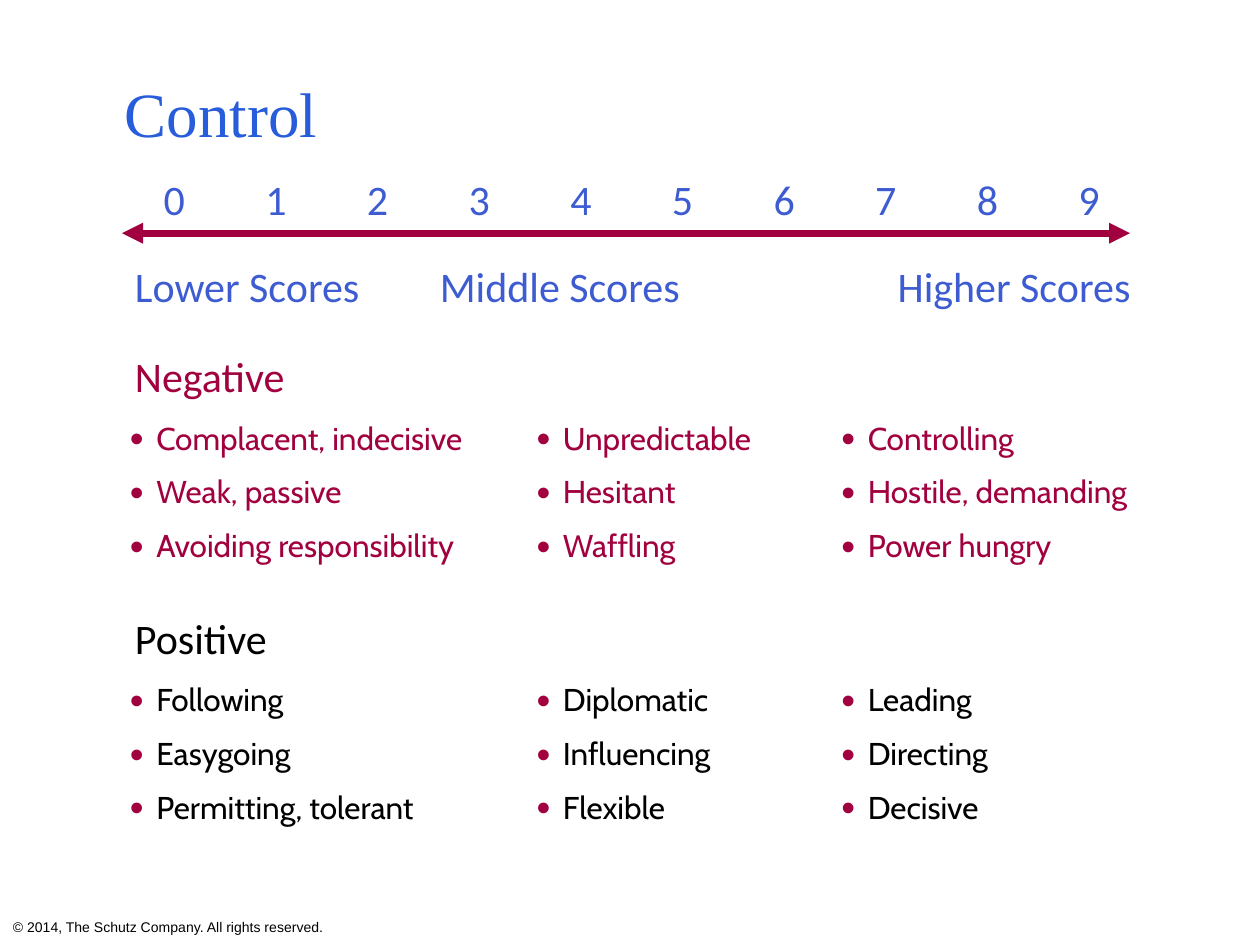
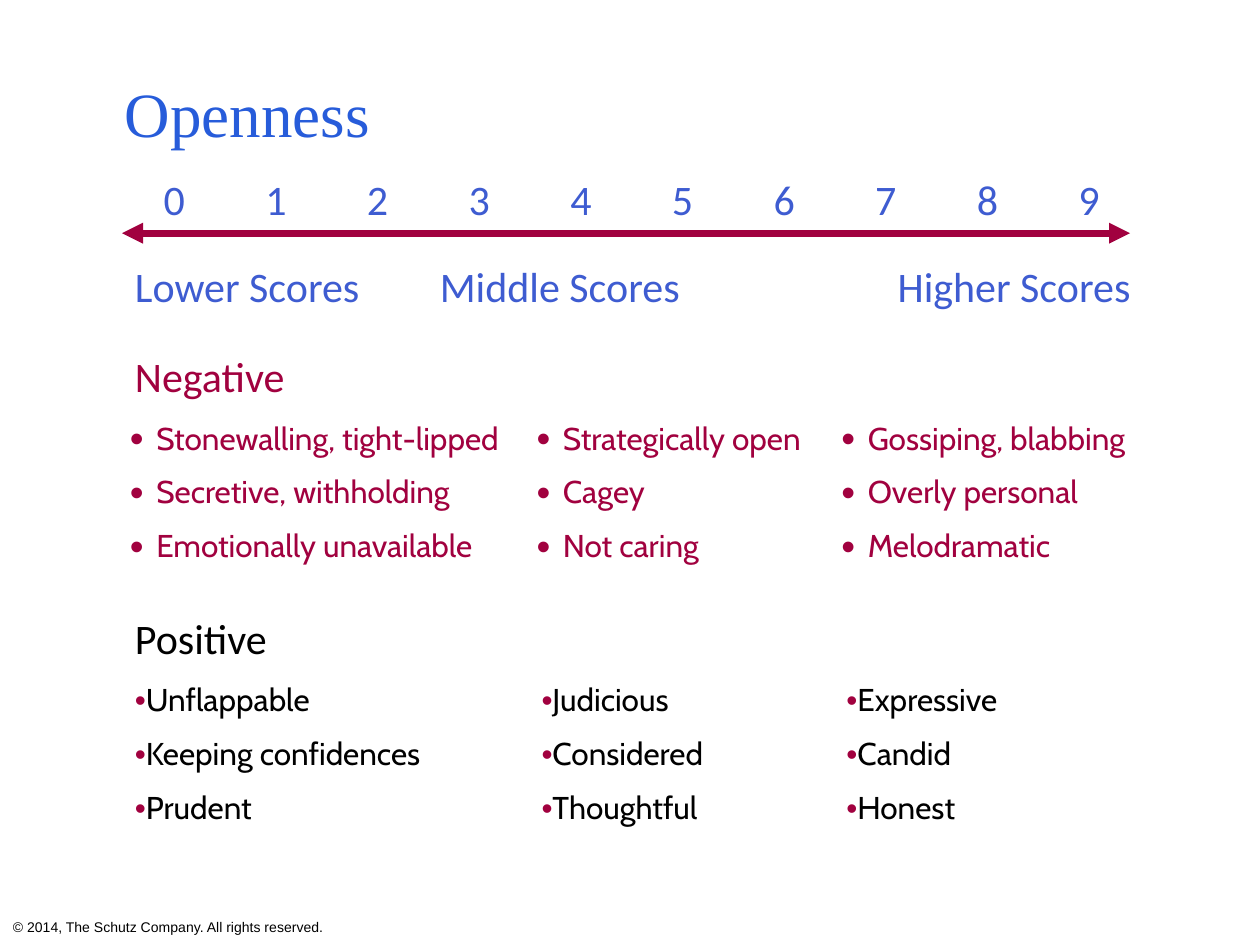
from dataclasses import dataclass

from lxml.etree import SubElement
from pptx import Presentation
from pptx.dml.color import RGBColor
from pptx.enum.shapes import MSO_CONNECTOR as Connector
from pptx.enum.text import MSO_ANCHOR as Anchor, MSO_AUTO_SIZE as AutoSize, PP_ALIGN as Align
from pptx.oxml.ns import qn
from pptx.util import Cm, Pt

# Shared colours, fonts and lengths
BLUE = RGBColor(0x3E, 0x5C, 0xD1)
TITLE_BLUE = RGBColor(0x27, 0x5C, 0xDA)
CRIMSON = RGBColor(0xA1, 0x01, 0x3F)
BLACK = RGBColor(0, 0, 0)
INSET = Cm(0.16)
INDENT = Cm(0.1)
DIGIT_INDENT = Cm(0.68)
BULLET_INDENT = Cm(0.53)
TABLE_LEFT, TABLE_TOP = Cm(2.46), Cm(3.25)
COLUMN_WIDTH = Cm(2.05)
ITEM_HEIGHT = Cm(1.07)
ROW_HEIGHTS = [Cm(1.63), Cm(1.85), Cm(1.57), *[ITEM_HEIGHT] * 3, Cm(2.03), *[ITEM_HEIGHT] * 3]
HEADING_SPANS = (3, 4, 3)
ITEM_SPANS = (4, 3, 3)
PLAIN_TABLE_STYLE = "{2D5ABB26-0587-4C30-8999-92F81FD0307C}"
COPYRIGHT = "© 2014, The Schutz Company. All rights reserved."


@dataclass(frozen=True)
class TextStyle:
    font: str
    size: int
    color: RGBColor


TITLE = TextStyle("Times New Roman", 36, TITLE_BLUE)
FOOTER = TextStyle("Arial", 8, BLACK)
SCALE = TextStyle("Calibri", 24, BLUE)
NEGATIVE_HEADING = TextStyle("Calibri", 24, CRIMSON)
POSITIVE_HEADING = TextStyle("Calibri", 24, BLACK)
NEGATIVE_ITEM = TextStyle("Cabin", 18, CRIMSON)
POSITIVE_ITEM = TextStyle("Cabin", 18, BLACK)


@dataclass(frozen=True)
class ScoreSlide:
    title: str
    title_width: Cm
    negative: tuple
    positive: tuple
    positive_hangs: bool = True


SLIDES = (
    ScoreSlide(
        "Control", Cm(5.18),
        (("Complacent, indecisive", "Unpredictable", "Controlling"),
         ("Weak, passive", "Hesitant", "Hostile, demanding"),
         ("Avoiding responsibility", "Waffling", "Power hungry")),
        (("Following", "Diplomatic", "Leading"),
         ("Easygoing", "Influencing", "Directing"),
         ("Permitting, tolerant", "Flexible", "Decisive")),
    ),
    ScoreSlide(
        "Openness", Cm(6.81),
        (("Stonewalling, tight-lipped", "Strategically open", "Gossiping, blabbing"),
         ("Secretive, withholding", "Cagey", "Overly personal"),
         ("Emotionally unavailable", "Not caring", "Melodramatic")),
        (("Unflappable", "Judicious", "Expressive"),
         ("Keeping confidences", "Considered", "Candid"),
         ("Prudent", "Thoughtful", "Honest")),
        positive_hangs=False,
    ),
)


def set_indent(para, left: int, first: int = 0) -> None:
    properties = para._p.get_or_add_pPr()
    properties.set("marL", str(int(left)))
    properties.set("indent", str(int(first)))


def add_bullet(para, hangs: bool) -> None:
    """Put a crimson bullet on the paragraph, larger when it hangs."""
    set_indent(para, BULLET_INDENT if hangs else INDENT, -BULLET_INDENT if hangs else 0)
    properties = para._p.get_or_add_pPr()
    color = SubElement(properties, qn("a:buClr"))
    SubElement(color, qn("a:srgbClr"), val=str(CRIMSON))
    if hangs:
        SubElement(properties, qn("a:buSzPct"), val="125000")
    SubElement(properties, qn("a:buFont"), typeface="Arial")
    SubElement(properties, qn("a:buChar"), char="•")


def write(para, text: str, style: TextStyle) -> None:
    para.text = text
    para.font.name = style.font
    para.font.size = Pt(style.size)
    para.font.color.rgb = style.color


def add_text(page, left: int, top: int, width: int, height: int,
             text: str, style: TextStyle, wraps: bool, indent: int = 0) -> None:
    frame = page.shapes.add_textbox(left, top, width, height).text_frame
    frame.margin_left = frame.margin_right = frame.margin_top = frame.margin_bottom = INSET
    frame.word_wrap = wraps
    frame.auto_size = AutoSize.SHAPE_TO_FIT_TEXT
    set_indent(frame.paragraphs[0], indent)
    write(frame.paragraphs[0], text, style)


def add_score_arrow(page) -> None:
    height = Cm(4.7)
    arrow = page.shapes.add_connector(Connector.STRAIGHT, TABLE_LEFT, height, Cm(22.78), height)
    arrow.line.color.rgb = CRIMSON
    arrow.line.width = Pt(4)
    line = arrow.line._get_or_add_ln()
    for end in ("a:headEnd", "a:tailEnd"):
        SubElement(line, qn(end), type="triangle")
    SubElement(arrow._element.spPr, qn("a:effectLst"))


def merge_row(table, row: int, spans: tuple) -> list:
    """Merge a row into cells of the given spans and return them."""
    cells, column = [], 0
    for span in spans:
        cell = table.cell(row, column)
        cell.merge(table.cell(row, column + span - 1))
        cells.append(cell)
        column += span
    return cells


def fill_items(table, first_row: int, rows: tuple, style: TextStyle, hangs: bool) -> None:
    for row, items in enumerate(rows, first_row):
        for cell, item in zip(merge_row(table, row, ITEM_SPANS), items):
            para = cell.text_frame.paragraphs[0]
            add_bullet(para, hangs)
            write(para, item, style)


def fill_heading(table, row: int, text: str, style: TextStyle) -> None:
    cell = merge_row(table, row, HEADING_SPANS)[0]
    cell.vertical_anchor = Anchor.BOTTOM
    para = cell.text_frame.paragraphs[0]
    set_indent(para, INDENT)
    write(para, text, style)


def add_score_table(page, content: ScoreSlide) -> None:
    frame = page.shapes.add_table(len(ROW_HEIGHTS), 10, TABLE_LEFT, TABLE_TOP,
                                  COLUMN_WIDTH * 10, sum(ROW_HEIGHTS))
    table = frame.table
    table.first_row = table.horz_banding = False
    table._tbl.tblPr.find(qn("a:tableStyleId")).text = PLAIN_TABLE_STYLE
    for column in table.columns:
        column.width = COLUMN_WIDTH
    for row, height in zip(table.rows, ROW_HEIGHTS):
        row.height = height
    for cell in table.iter_cells():
        cell.margin_left = cell.margin_right = cell.margin_top = cell.margin_bottom = INSET
        cell.vertical_anchor = Anchor.MIDDLE
        cell.fill.background()

    # Score scale
    for score in range(10):
        para = table.cell(0, score).text_frame.paragraphs[0]
        set_indent(para, DIGIT_INDENT)
        write(para, str(score), SCALE)
    for cell, level in zip(merge_row(table, 1, HEADING_SPANS), ("Lower", "Middle", "Higher")):
        para = cell.text_frame.paragraphs[0]
        set_indent(para, INDENT)
        para.alignment = Align.RIGHT if level == "Higher" else Align.LEFT
        write(para, f"{level} Scores", SCALE)

    # Behaviours
    fill_heading(table, 2, "Negative", NEGATIVE_HEADING)
    fill_items(table, 3, content.negative, NEGATIVE_ITEM, True)
    fill_heading(table, 6, "Positive", POSITIVE_HEADING)
    fill_items(table, 7, content.positive, POSITIVE_ITEM, content.positive_hangs)


def main() -> None:
    deck = Presentation()
    deck.slide_width, deck.slide_height = Cm(25.4), Cm(19.05)
    for content in SLIDES:
        page = deck.slides.add_slide(deck.slide_layouts[6])
        add_text(page, 0, Cm(18.36), deck.slide_width, Cm(0.61), COPYRIGHT, FOOTER, True, INDENT)
        add_score_arrow(page)
        add_score_table(page, content)
        add_text(page, Cm(2.36), Cm(1.35), content.title_width, Cm(1.8), content.title, TITLE, False)
    deck.save("out.pptx")


if __name__ == "__main__":
    main()
